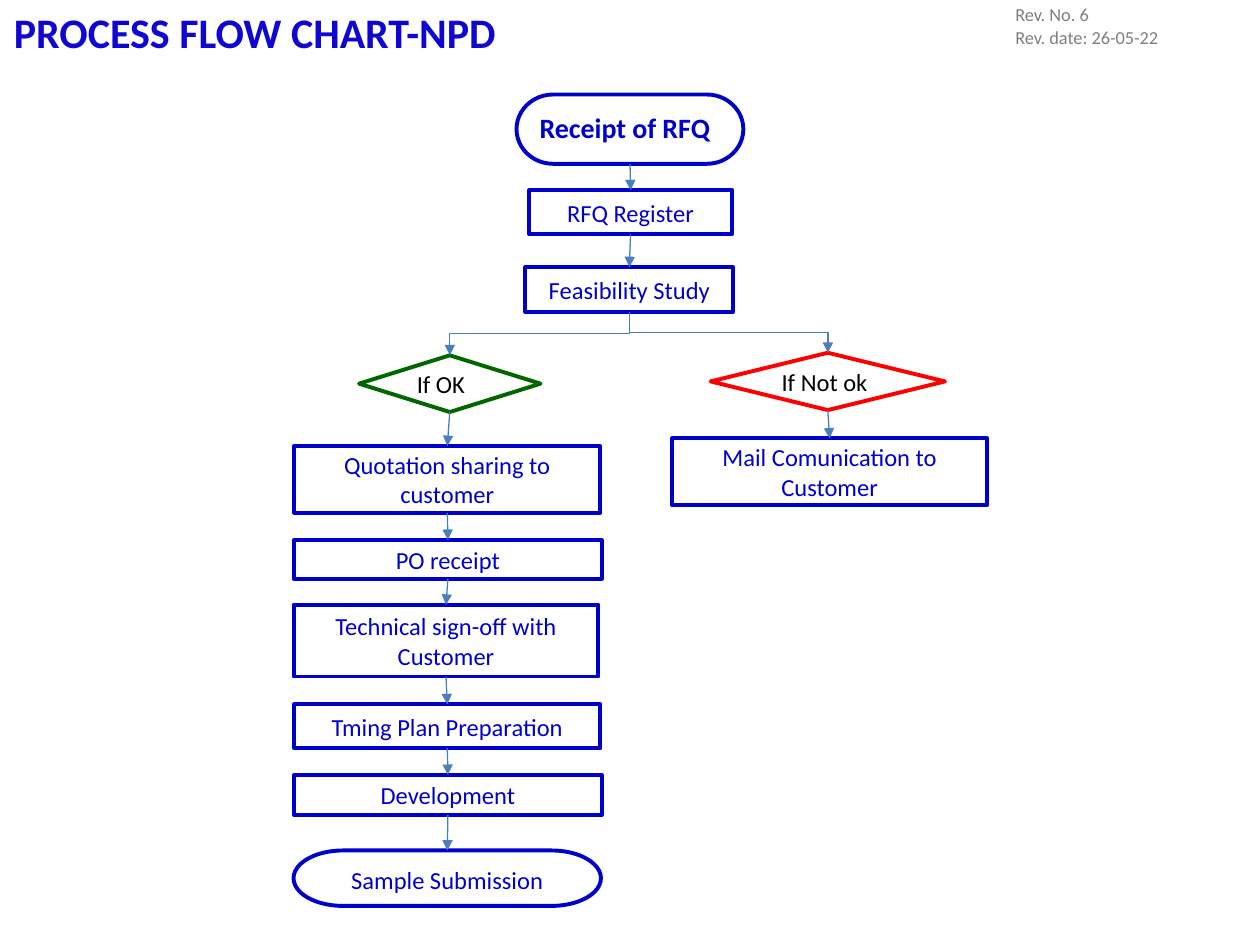
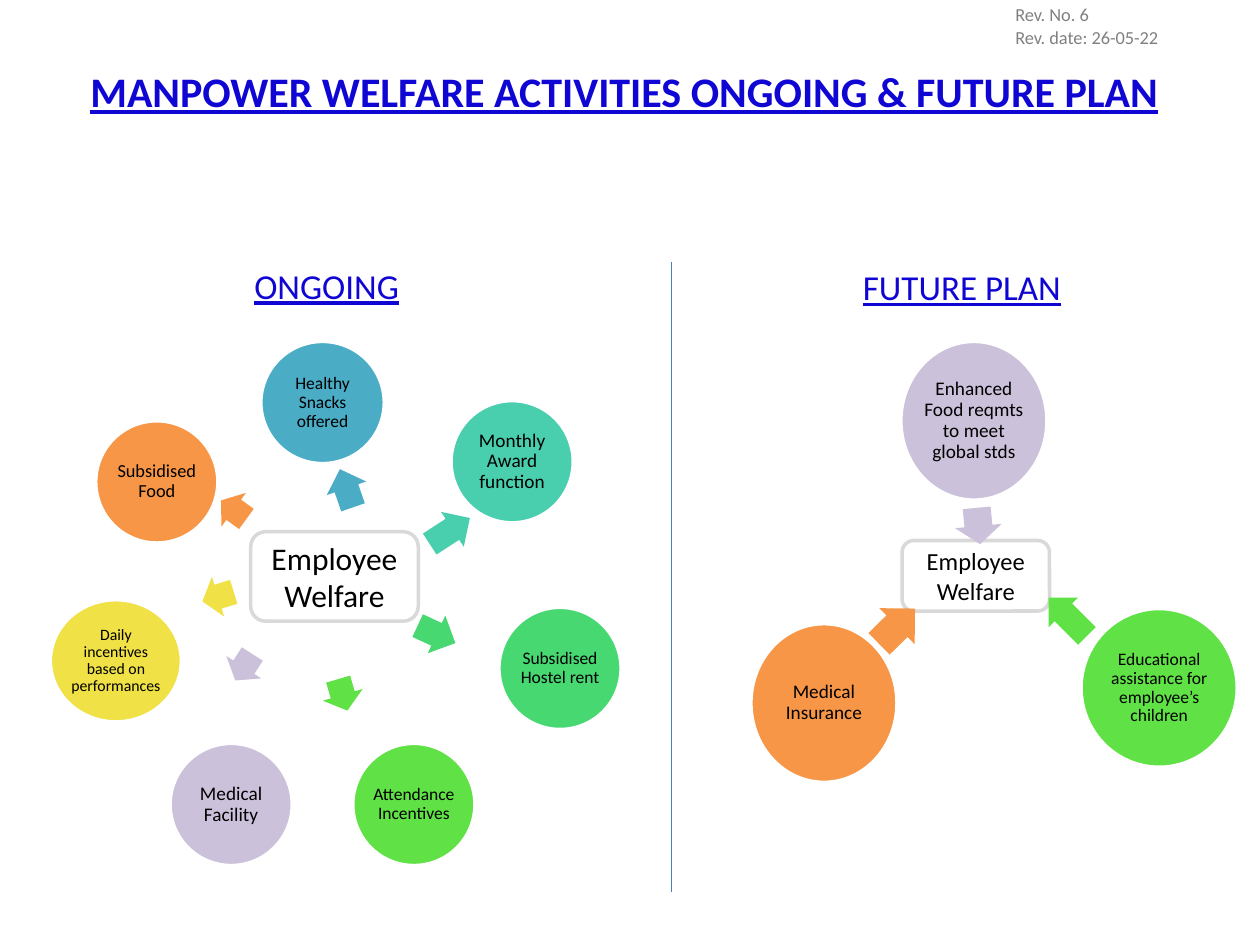
from lxml import etree
from pptx import Presentation
from pptx import util as u
from pptx.dml.color import RGBColor
from pptx.enum import shapes, text
from pptx.oxml.ns import qn

colour = RGBColor.from_string
KIND = shapes.MSO_SHAPE
TOP, MIDDLE = text.MSO_ANCHOR.TOP, text.MSO_ANCHOR.MIDDLE
LEFT, CENTRE = text.PP_ALIGN.LEFT, text.PP_ALIGN.CENTER

# Shared palette and title style
TITLE_BLUE, BOX_BLUE, LINE_BLUE = "1006D4", "0000CC", "4B7EBC"
GREEN, RED, GREY, BLACK = "006600", "FF0000", "808080", "000000"
TITLE_STYLE = {"size": 24, "ink": TITLE_BLUE, "bold": True}

presentation = Presentation()
presentation.slide_width, presentation.slide_height = u.Inches(10), u.Inches(7.5)

# The slide is a grid of 100 columns by 75 rows of square cells
CELL = presentation.slide_width // 100


def write(shape, lines, anchor=MIDDLE, align=CENTRE, ink=BLACK, size=14,
          margin=None, spacing=None, **style):
    frame = shape.text_frame
    format_values = {"word_wrap": True, "vertical_anchor": anchor,
                     "auto_size": text.MSO_AUTO_SIZE.NONE}
    if margin is not None:
        for side in ("left", "top", "right", "bottom"):
            format_values["margin_" + side] = u.Inches(margin)
    for name, value in format_values.items():
        setattr(frame, name, value)
    frame.text = lines
    for paragraph in frame.paragraphs:
        paragraph.alignment = align
        paragraph.line_spacing = spacing
        font_values = {"name": "Calibri", "size": u.Pt(size), **style}
        for name, value in font_values.items():
            setattr(paragraph.font, name, value)
        paragraph.font.color.rgb = colour(ink)


def add_block(slide, kind, box, fill=None, line=None, width=2):
    shape = slide.shapes.add_shape(kind, *[round(n * CELL) for n in box])
    shape.shadow.inherit = False
    if fill:
        shape.fill.solid()
        shape.fill.fore_color.rgb = colour(fill)
    else:
        shape.fill.background()
    if line:
        shape.line.color.rgb = colour(line)
        shape.line.width = u.Pt(width)
    else:
        shape.line.fill.background()
    return shape


# Both slides with their titles
title_only = presentation.slide_layouts[5]
titles = [
    ("PROCESS FLOW CHART-NPD", (0.1, 0, 41.5, 5),
     {"anchor": TOP, "align": LEFT}),
    ("MANPOWER WELFARE ACTIVITIES ONGOING & FUTURE PLAN", (3.3, 2.8, 92.5, 8.8),
     {"underline": True}),
]
for words, box, extra in titles:
    slide = presentation.slides.add_slide(title_only)
    title = slide.shapes.title
    for name, value in zip(("left", "top", "width", "height"), box):
        setattr(title, name, round(value * CELL))
    write(title, words, **TITLE_STYLE, **extra)
flow_slide, welfare_slide = presentation.slides

# Revision note, kept on the shared layout
revision = flow_slide.shapes.add_textbox(
    *[round(n * CELL) for n in (79.6, -0.2, 17.9, 4.7)])
write(revision, "Rev. No. 6\nRev. date: 26-05-22", TOP, LEFT, GREY, 10.5)
title_only.shapes.element.append(revision.element)

# Flow chart steps: text, kind, box, line colour, text format
RECT, END, DECISION = (KIND.RECTANGLE, KIND.FLOWCHART_TERMINATOR,
                       KIND.FLOWCHART_DECISION)
blue = {"ink": BOX_BLUE}
steps = {
    "receipt": ("Receipt of RFQ", END, (41, 7.5, 18, 5.5), BOX_BLUE,
                {**blue, "anchor": TOP, "align": LEFT, "size": 16, "bold": True}),
    "register": ("RFQ Register", RECT, (42, 15.1, 16.1, 3.5), BOX_BLUE, blue),
    "study": ("Feasibility Study", RECT, (41.7, 21.2, 16.5, 3.55), BOX_BLUE, blue),
    "ok": ("If OK", DECISION, (28.5, 28.2, 14.4, 4.5), GREEN, {"align": LEFT}),
    "not ok": ("If Not ok", DECISION, (56.4, 28, 18.6, 4.55), RED, {"align": LEFT}),
    "mail": ("Mail Comunication to Customer", RECT, (53.35, 34.8, 25, 5.3),
             BOX_BLUE, blue),
    "quotation": ("Quotation sharing to customer", RECT, (23.35, 35.4, 24.3, 5.3),
                  BOX_BLUE, blue),
    "order": ("PO receipt", RECT, (23.35, 42.85, 24.4, 3.1), BOX_BLUE, blue),
    "sign-off": ("Technical sign-off with Customer", RECT, (23.3, 48, 24.2, 5.7),
                 BOX_BLUE, blue),
    "timing": ("Tming Plan Preparation", RECT, (23.35, 55.9, 24.3, 3.5),
               BOX_BLUE, blue),
    "development": ("Development", RECT, (23.35, 61.5, 24.4, 3.2), BOX_BLUE, blue),
    "sample": ("Sample Submission", END, (23.3, 67.5, 24.4, 4.4), BOX_BLUE,
               {**blue, "anchor": TOP}),
}
blocks = {}
for step, (words, kind, box, line, style) in steps.items():
    blocks[step] = add_block(flow_slide, kind, box, line=line, width=2.25)
    write(blocks[step], words, **style)

# Arrows run from the bottom of one step to the top of the next
chains = [
    ("receipt", "register", "study", "ok", "quotation", "order", "sign-off",
     "timing", "development", "sample"),
    ("study", "not ok", "mail"),
]
connectors = []
for chain in chains:
    for start, end in zip(chain, chain[1:]):
        branch = start == "study"
        kind = shapes.MSO_CONNECTOR.ELBOW if branch else shapes.MSO_CONNECTOR.STRAIGHT
        arrow = flow_slide.shapes.add_connector(kind, 0, 0, 0, 0)
        arrow.begin_connect(blocks[start], 2)
        arrow.end_connect(blocks[end], 0)
        connectors.append((arrow, True))
        if branch:
            # Turn the elbow so that it leaves downwards
            run, drop = arrow.width, arrow.height
            to_right = arrow.end_x > arrow.begin_x
            arrow.left += (run - drop) // 2
            arrow.top += (drop - run) // 2
            arrow.width, arrow.height = drop, run
            frame = arrow.element.spPr.find(qn("a:xfrm"))
            frame.set("rot", "16200000" if to_right else "5400000")
            frame.set("flipH", "1" if to_right else "0")

# Welfare section headings and divider
for words, box in [("ONGOING", (19.2, 20.8, 16.7, 3.7)),
                   ("FUTURE PLAN", (67.5, 20.2, 21.2, 5.1))]:
    heading = welfare_slide.shapes.add_textbox(*[round(n * CELL) for n in box])
    write(heading, words, align=LEFT, ink=TITLE_BLUE, size=20, underline=True)
divider = welfare_slide.shapes.add_connector(
    shapes.MSO_CONNECTOR.STRAIGHT,
    *[round(n * CELL) for n in (53.3, 20.8, 53.3, 70.8)])
connectors.append((divider, False))

# Line style of every connector
for connector, has_head in connectors:
    connector.line.color.rgb = colour(LINE_BLUE)
    connector.line.width = u.Pt(0.75)
    properties = connector.element.spPr
    if has_head:
        etree.SubElement(properties.find(qn("a:ln")), qn("a:tailEnd"), type="triangle")
    etree.SubElement(properties, qn("a:effectLst"))

# Welfare hubs
for box, size in [((19.9, 42.2, 13.3, 7.1), 18), ((71.6, 42.9, 11.7, 5.6), 14)]:
    hub = add_block(welfare_slide, KIND.ROUNDED_RECTANGLE, box, line="D9D9D9")
    write(hub, "Employee Welfare", size=size)

# Activities: text, size, fill, circle box, arrow box, arrow angle
activities = [
    ("Healthy Snacks offered", 10, "4BACC6",
     (20.7, 27.1, 9.8, 9.7), (25.9, 37.1, 3.2, 3.3), 250.9),
    ("Monthly Award function", 11, "49CFAE",
     (35.8, 31.8, 9.7, 9.7), (33.8, 40.5, 3.8, 3.3), 327),
    ("Subsidised Hostel rent", 10, "47D872",
     (39.6, 48.2, 9.7, 9.7), (33, 48.7, 3.3, 3.3), 24.8),
    ("Attendance Incentives", 10, "60E146",
     (28, 59, 9.7, 9.7), (25.9, 53.5, 2.6, 3.3), 73.6),
    ("Medical Facility", 11, "CCC1DA",
     (13.5, 59, 9.7, 9.7), (18.1, 51.3, 2.5, 3.3), 122.7),
    ("Daily incentives based on performances", 9, "F0E146",
     (4, 47.6, 10.4, 9.7), (16, 45.7, 2.6, 3.3), 162.9),
    ("Subsidised Food", 10.5, "F79646",
     (7.6, 33.4, 9.7, 9.7), (17.3, 38.8, 2.5, 3.3), 216),
    ("Enhanced Food reqmts to meet global stds", 11, "CCC1DA",
     (71.5, 27.1, 11.6, 12.6), (76.2, 39.9, 2.9, 3.7), 84.6),
    ("Educational assistance for employee’s children", 10, "60E146",
     (85.8, 48.3, 12.4, 12.6), (82.6, 47.3, 4.3, 3.3), 224.9),
    ("Medical Insurance", 11, "F79646",
     (59.6, 49.5, 11.6, 12.6), (69.2, 47.7, 4, 4), 315.6),
]
for words, size, fill, circle_box, arrow_box, angle in activities:
    circle = add_block(welfare_slide, KIND.OVAL, circle_box, fill, "FFFFFF")
    write(circle, words, size=size, margin=0.01, spacing=0.9)
    arrow = add_block(welfare_slide, KIND.RIGHT_ARROW, arrow_box, fill)
    arrow.adjustments[0], arrow.adjustments[1] = 0.6, 0.5
    arrow.rotation = angle

presentation.save("out.pptx")
